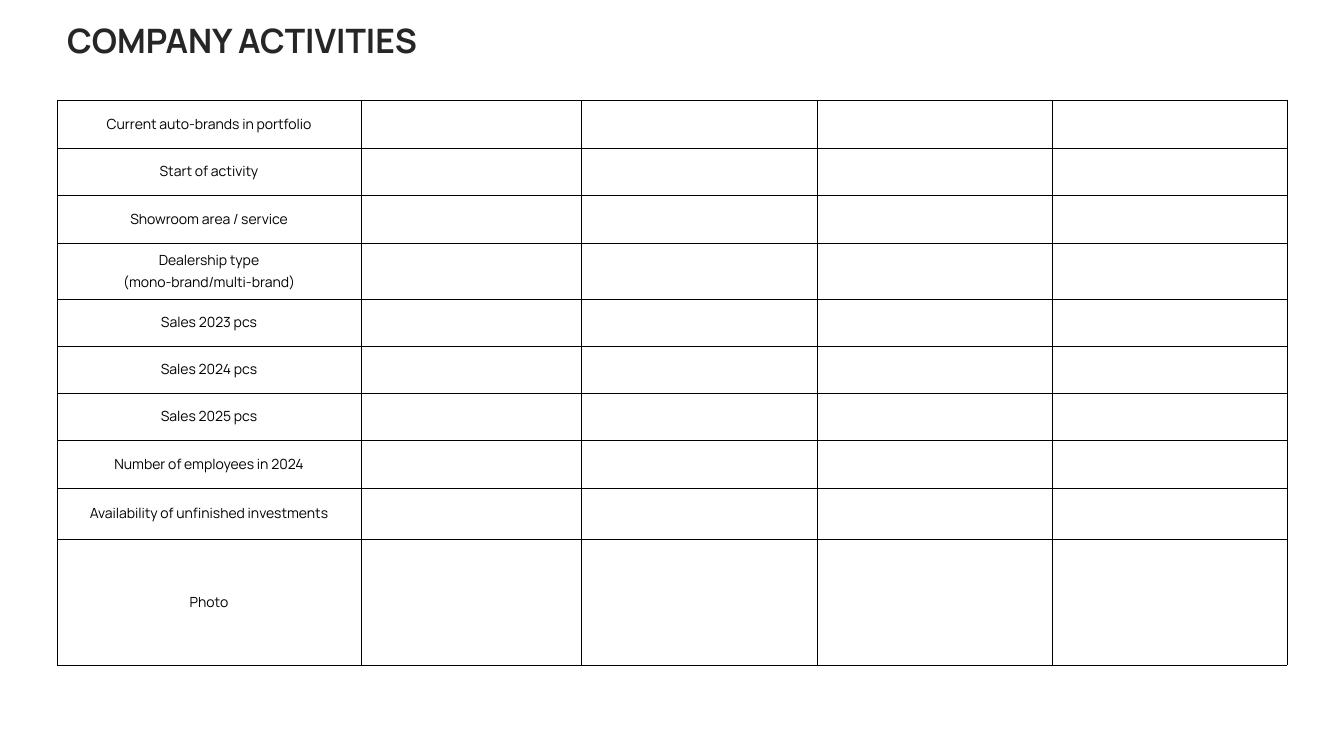
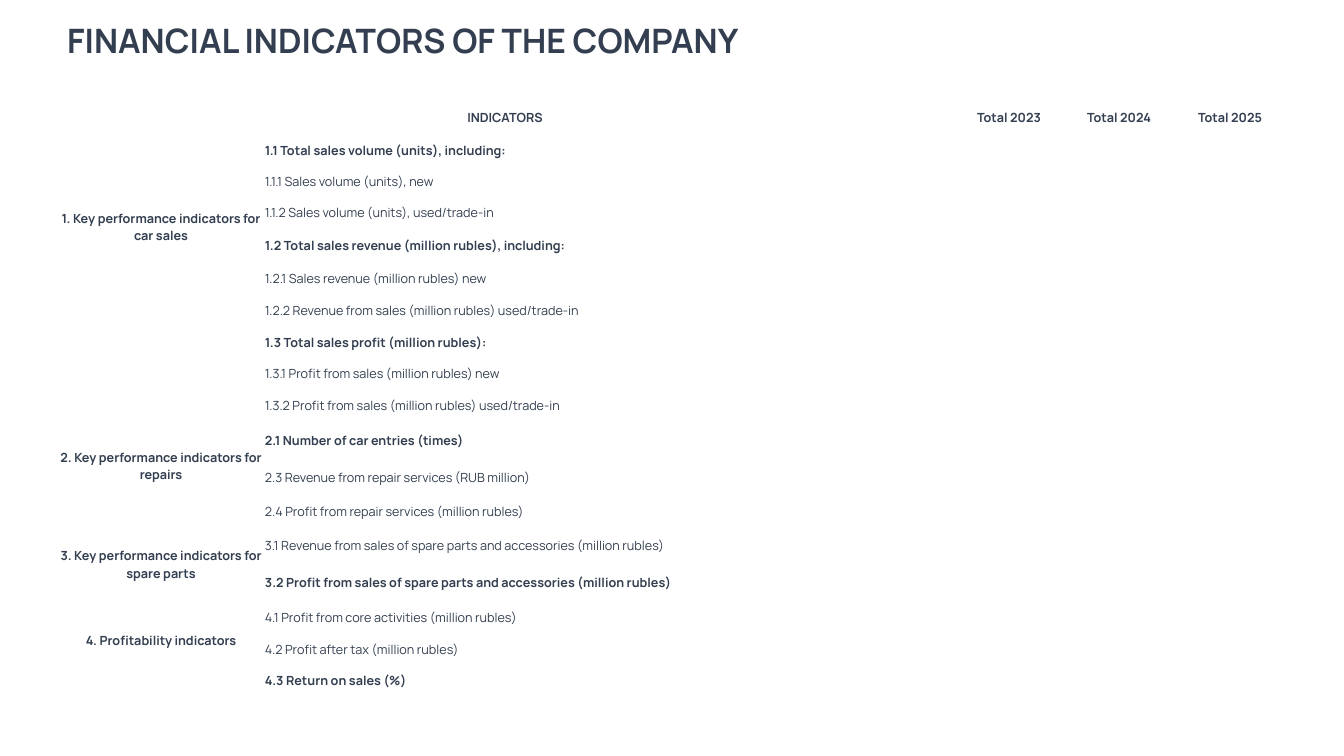
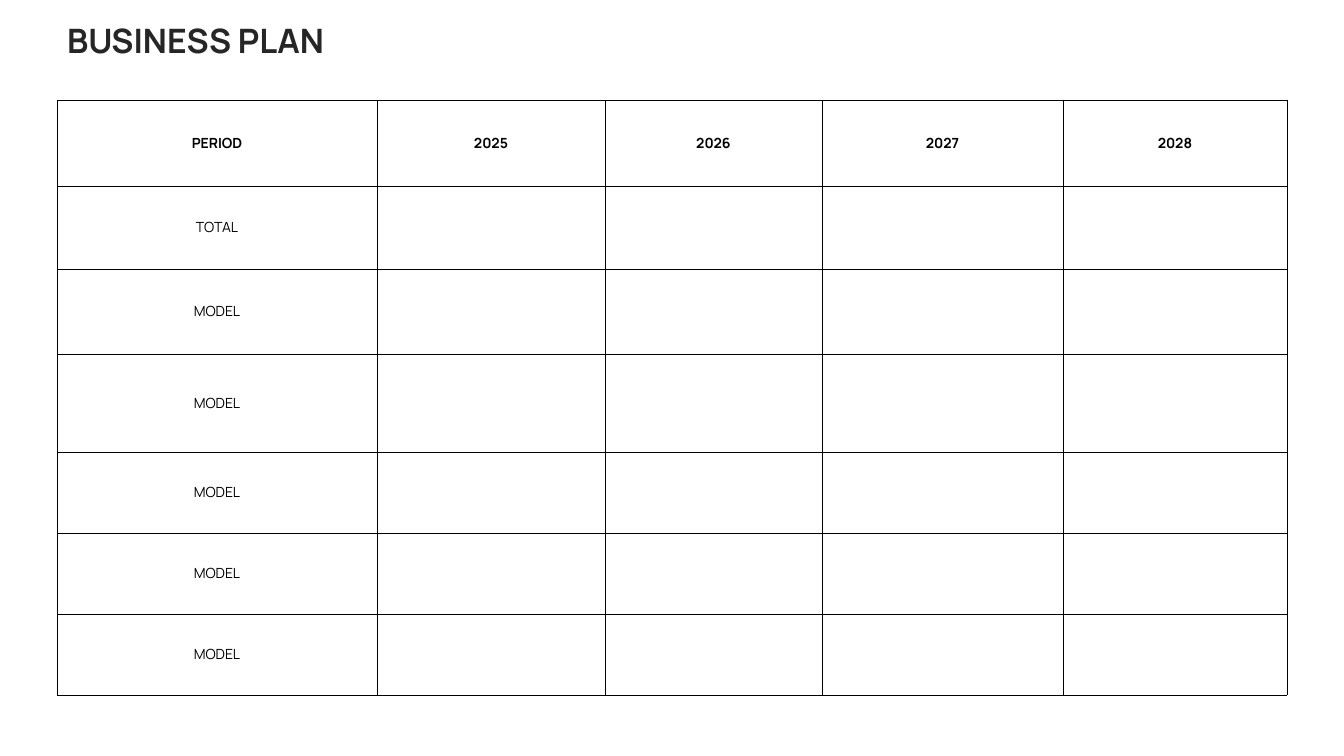
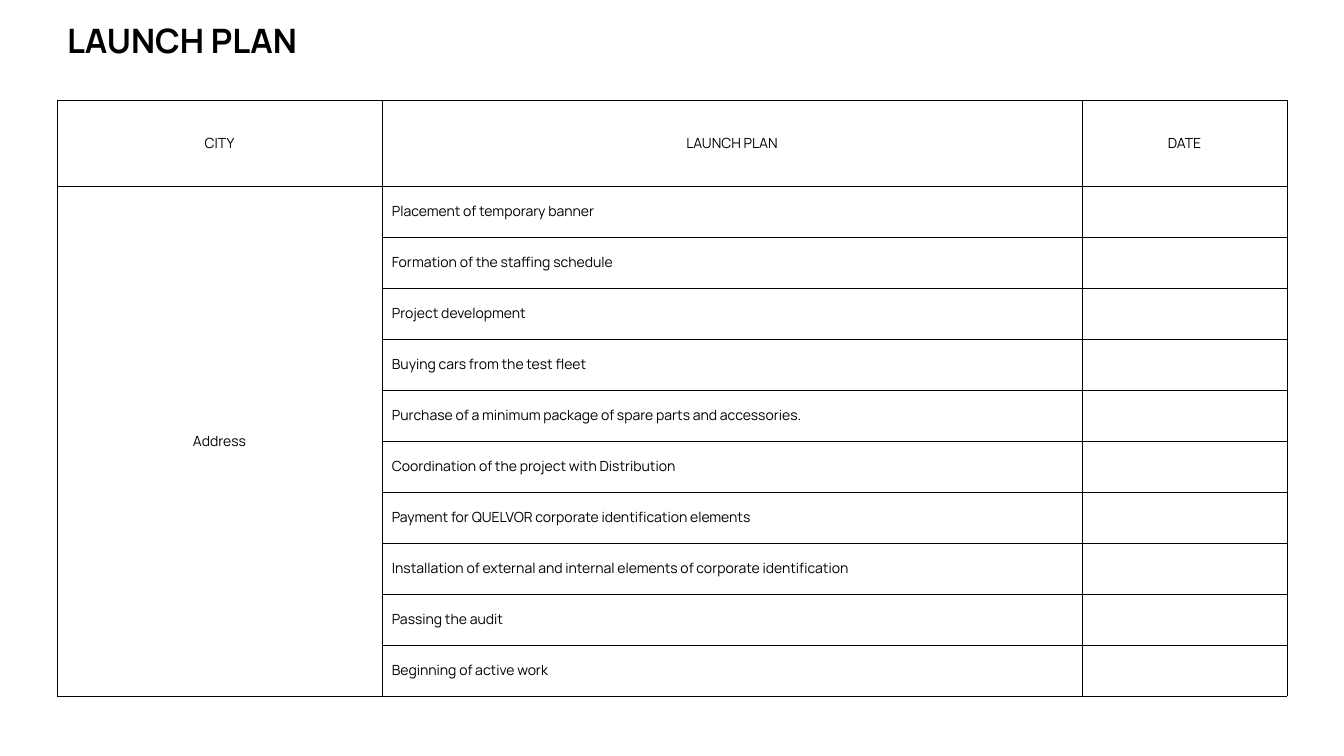
"""Builds the dealer application deck: one title and one table on each slide."""
from dataclasses import dataclass

from lxml import etree
from pptx import Presentation
from pptx import presentation as pres
from pptx import table as tables
from pptx import util as u
from pptx.dml.color import RGBColor
from pptx.enum import text
from pptx.oxml.ns import qn

EMU_PER_PX = 914400 / 100.8
FONT = "Manrope"
BLACK, CHARCOAL, SLATE, WHITE = "000000", "262626", "333F50", "FFFFFF"
TITLE_BOX = (57, 0, 1181, 86)
TABLE_LEFT, TABLE_TOP = 57, 100
TITLE_ONLY = 5
PLAIN_STYLE = "{2D5ABB26-0587-4C30-8999-92F81FD0307C}"
SIDES = ("a:lnL", "a:lnR", "a:lnT", "a:lnB")


@dataclass(frozen=True)
class Entry:
    row: int
    column: int
    words: str
    bold: bool = False
    centred: bool = True
    down: int = 1
    across: int = 1
    lift: int = 0


@dataclass(frozen=True)
class Sheet:
    title: str
    title_color: str
    columns: list[int]
    rows: list[int]
    entries: list[Entry]
    color: str = BLACK
    size: int = 10
    side_margin: int = 0
    bordered: bool = True


def px(length: int) -> u.Emu:
    return u.Emu(round(length * EMU_PER_PX))


def rgb(value: str) -> RGBColor:
    return RGBColor.from_string(value)


def add_borders(cell: tables._Cell) -> None:
    properties = cell._tc.get_or_add_tcPr()
    for side in SIDES:
        line = etree.SubElement(properties, qn(side), w=str(u.Pt(0.25)))
        fill = etree.SubElement(line, qn("a:solidFill"))
        etree.SubElement(fill, qn("a:srgbClr"), val=BLACK)


def style_cell(cell: tables._Cell, sheet: Sheet) -> None:
    if sheet.bordered:
        add_borders(cell)
    cell.fill.solid()
    cell.fill.fore_color.rgb = rgb(WHITE)
    cell.vertical_anchor = text.MSO_ANCHOR.MIDDLE
    cell.margin_left = cell.margin_right = px(sheet.side_margin)
    cell.margin_top = cell.margin_bottom = 0


def set_font(para, size: int, color: str, bold: bool) -> None:
    para.font.name = FONT
    para.font.size = u.Pt(size)
    para.font.bold = bold
    para.font.color.rgb = rgb(color)


def write_entry(table: tables.Table, entry: Entry, sheet: Sheet) -> None:
    cell = table.cell(entry.row, entry.column)
    if entry.down * entry.across > 1:
        cell.merge(table.cell(entry.row + entry.down - 1, entry.column + entry.across - 1))
    cell.text = entry.words
    cell.margin_bottom = px(entry.lift)
    for index, para in enumerate(cell.text_frame.paragraphs):
        para.alignment = text.PP_ALIGN.CENTER if entry.centred else text.PP_ALIGN.LEFT
        if index:
            para.space_before = u.Pt(2)
        set_font(para, sheet.size, sheet.color, entry.bold)


def add_title(page, sheet: Sheet) -> None:
    title = page.shapes.title
    title.left, title.top, title.width, title.height = map(px, TITLE_BOX)
    frame = title.text_frame
    frame.text = sheet.title
    frame.vertical_anchor = text.MSO_ANCHOR.MIDDLE
    para = frame.paragraphs[0]
    para.alignment = text.PP_ALIGN.LEFT
    para.line_spacing = 0.9
    set_font(para, 24, sheet.title_color, True)


def add_grid(page, sheet: Sheet) -> None:
    frame = page.shapes.add_table(
        len(sheet.rows), len(sheet.columns), px(TABLE_LEFT), px(TABLE_TOP),
        px(sum(sheet.columns)), px(sum(sheet.rows)))
    table = frame.table
    table.first_row = table.horz_banding = False
    table._tbl.tblPr.find(qn("a:tableStyleId")).text = PLAIN_STYLE
    for column, width in zip(table.columns, sheet.columns):
        column.width = px(width)
    for row, height in zip(table.rows, sheet.rows):
        row.height = px(height)
    for cell in table.iter_cells():
        style_cell(cell, sheet)
    for entry in sheet.entries:
        write_entry(table, entry, sheet)
    for cell in table.iter_cells():
        if not cell.text:
            para = cell.text_frame.paragraphs[0]
            etree.SubElement(para._p, qn("a:endParaRPr"), sz=str(sheet.size * 100))


def add_sheet(deck: pres.Presentation, sheet: Sheet) -> None:
    page = deck.slides.add_slide(deck.slide_layouts[TITLE_ONLY])
    add_title(page, sheet)
    add_grid(page, sheet)


ACTIVITIES = [
    "Current auto-brands in portfolio",
    "Start of activity",
    "Showroom area / service",
    "Dealership type\n(mono-brand/multi-brand)",
    "Sales 2023 pcs",
    "Sales 2024 pcs",
    "Sales 2025 pcs",
    "Number of employees in 2024",
    "Availability of unfinished investments",
    "Photo",
]

INDICATORS = [
    ("1.1 Total sales volume (units), including:", True),
    ("1.1.1 Sales volume (units), new", False),
    ("1.1.2 Sales volume (units), used/trade-in", False),
    ("1.2 Total sales revenue (million rubles), including:", True),
    ("1.2.1 Sales revenue (million rubles) new", False),
    ("1.2.2 Revenue from sales (million rubles) used/trade-in", False),
    ("1.3 Total sales profit (million rubles):", True),
    ("1.3.1 Profit from sales (million rubles) new", False),
    ("1.3.2 Profit from sales (million rubles) used/trade-in", False),
    ("2.1 Number of car entries (times)", True),
    ("2.3 Revenue from repair services (RUB million)", False),
    ("2.4 Profit from repair services (million rubles)", False),
    ("3.1 Revenue from sales of spare parts and accessories (million rubles)", False),
    ("3.2 Profit from sales of spare parts and accessories (million rubles)", True),
    ("4.1 Profit from core activities (million rubles)", False),
    ("4.2 Profit after tax (million rubles)", False),
    ("4.3 Return on sales (%)", True),
]

INDICATOR_HEADINGS = [
    Entry(0, 0, "INDICATORS", True, across=2),
    *(Entry(0, column, f"Total {2021 + column}", True) for column in (2, 3, 4)),
    Entry(1, 0, "1. Key performance indicators for car sales", True, down=9, lift=102),
    Entry(10, 0, "2. Key performance indicators for repairs", True, down=3, lift=17),
    Entry(13, 0, "3. Key performance indicators for spare parts", True, down=2),
    Entry(15, 0, "4. Profitability indicators", True, down=3, lift=17),
]

PERIODS = ["PERIOD", "2025", "2026", "2027", "2028"]
PLAN_ROWS = ["TOTAL"] + ["MODEL"] * 5

LAUNCH_STEPS = [
    "Placement of temporary banner",
    "Formation of the staffing schedule",
    "Project development",
    "Buying cars from the test fleet",
    "Purchase of a minimum package of spare parts and accessories.",
    "Coordination of the project with Distribution",
    "Payment for QUELVOR corporate identification elements",
    "Installation of external and internal elements of corporate identification",
    "Passing the audit",
    "Beginning of active work",
]

SHEETS = [
    Sheet(
        "COMPANY ACTIVITIES", CHARCOAL,
        [304, 220, 236, 235, 235],
        [48, 47, 48, 56, 47, 47, 47, 48, 51, 126],
        [Entry(row, 0, words) for row, words in enumerate(ACTIVITIES)]),
    Sheet(
        "FINANCIAL INDICATORS OF THE COMPANY", SLATE,
        [208, 688, 112, 108, 114],
        [35, 31, 31, 31, 35, 31, 33, 31, 31, 33, 38, 35, 33, 36, 38, 32, 31, 31],
        INDICATOR_HEADINGS + [Entry(row, 1, words, bold, centred=False)
                              for row, (words, bold) in enumerate(INDICATORS, 1)],
        color=SLATE, size=9, bordered=False),
    Sheet(
        "BUSINESS PLAN", CHARCOAL,
        [320, 228, 217, 241, 224],
        [86, 83, 85, 98, 81, 81, 81],
        [Entry(0, column, words, True) for column, words in enumerate(PERIODS)]
        + [Entry(row, 0, words) for row, words in enumerate(PLAN_ROWS, 1)]),
    Sheet(
        "LAUNCH PLAN", BLACK,
        [325, 700, 205],
        [86] + [51] * len(LAUNCH_STEPS),
        [Entry(0, column, words) for column, words in enumerate(["CITY", "LAUNCH PLAN", "DATE"])]
        + [Entry(1, 0, "Address", down=len(LAUNCH_STEPS))]
        + [Entry(row, 1, words, centred=False) for row, words in enumerate(LAUNCH_STEPS, 1)],
        side_margin=10),
]


def main() -> None:
    deck = Presentation()
    deck.slide_width, deck.slide_height = px(1344), px(756)
    for sheet in SHEETS:
        add_sheet(deck, sheet)
    deck.save("out.pptx")


if __name__ == "__main__":
    main()
